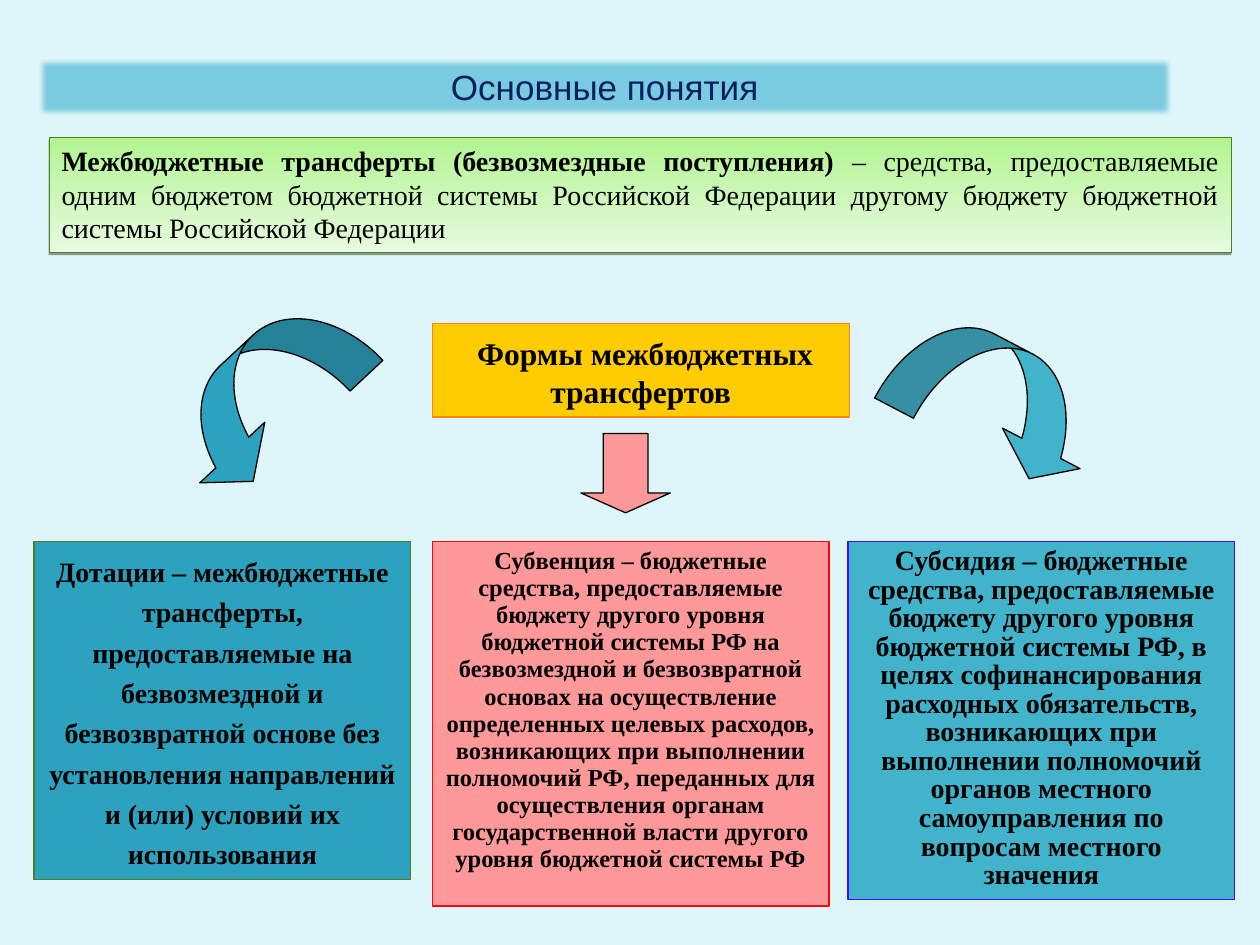
from dataclasses import dataclass

from lxml.etree import SubElement as Sub
from pptx import Presentation
from pptx.dml.color import RGBColor as RGB
from pptx.enum.shapes import MSO_SHAPE as Kind
from pptx.enum.text import MSO_ANCHOR as Anchor, MSO_AUTO_SIZE as Auto, PP_ALIGN as Align
from pptx.oxml.ns import qn
from pptx.util import Inches, Pt


@dataclass(frozen=True)
class Theme:
    back: str = "DEF5FA"
    band: str = "7ACBE0"
    navy: str = "002060"
    black: str = "000000"
    lime: str = "B2F591"
    pale: str = "E7FADF"
    green: str = "4A801E"
    gold: str = "FFCC00"
    orange: str = "FF8119"
    teal: str = "2DA2BF"
    pink: str = "FF9999"
    red: str = "FB050B"
    sky: str = "41B4CB"
    violet: str = "4709F7"
    sans: str = "Arial"
    serif: str = "Times New Roman"
    title: int = 20
    head: int = 18
    body: int = 16
    small: int = 14


T = Theme()


def add_box(kind, place, fill, line, width=0.75):
    shape = slide.shapes.add_shape(kind, *map(Inches, place))
    shape.shadow.inherit = False
    if fill:
        shape.fill.solid()
        shape.fill.fore_color.rgb = RGB.from_string(fill)
    shape.line.color.rgb = RGB.from_string(line)
    shape.line.width = Pt(width)
    return shape


def write(shape, runs, align=Align.CENTER, font=T.serif, color=T.black,
          space=1.0, anchor=Anchor.TOP):
    """Fill the shape with one paragraph of (text, size, bold) runs."""
    frame = shape.text_frame
    frame.word_wrap = True
    frame.auto_size = Auto.NONE
    frame.vertical_anchor = anchor
    para = frame.paragraphs[0]
    para.alignment = align
    para.line_spacing = space
    para.space_before = Pt(0)
    for text, size, bold in runs:
        run = para.add_run()
        run.text = text
        run.font.name = font
        run.font.size = Pt(size)
        run.font.bold = bold
        run.font.color.rgb = RGB.from_string(color)


deck = Presentation()
deck.slide_width, deck.slide_height = Inches(10), Inches(7.5)
slide = deck.slides.add_slide(deck.slide_layouts[5])
slide.background.fill.solid()
slide.background.fill.fore_color.rgb = RGB.from_string(T.back)

# Title band with soft edges
title = slide.shapes.title
title.left, title.top = Inches(0.31), Inches(0.47)
title.width, title.height = Inches(8.98), Inches(0.44)
title.fill.solid()
title.fill.fore_color.rgb = RGB.from_string(T.band)
title.shadow.inherit = False
Sub(title.element.spPr.find(qn("a:effectLst")), qn("a:softEdge"), rad=str(Pt(2.5)))
write(title, [("Основные понятия", T.title, False)], font=T.sans, color=T.navy,
      anchor=Anchor.MIDDLE)

# Definition
term = add_box(Kind.RECTANGLE, (0.39, 1.09, 9.38, 0.91), None, T.green, 0.5)
term.fill.gradient()
term.fill.gradient_angle = 270
for stop, color in zip(term.fill.gradient_stops, (T.lime, T.pale)):
    stop.color.rgb = RGB.from_string(color)
for stop, place in zip(term.fill.gradient_stops, (0, 1)):
    stop.position = place
shade = Sub(term.element.spPr.find(qn("a:effectLst")), qn("a:outerShdw"),
            blurRad="0", dist=str(Pt(1.6)), dir="5400000", rotWithShape="0")
Sub(Sub(shade, qn("a:srgbClr"), val=T.black), qn("a:alpha"), val="38000")
write(term, [
    ("Межбюджетные трансферты (безвозмездные поступления) ", T.body, True),
    ("– средства, предоставляемые одним бюджетом бюджетной системы Российской "
     "Федерации другому бюджету бюджетной системы Российской Федерации", T.body, False),
], align=Align.JUSTIFY)

# Heading of the three forms
forms = add_box(Kind.RECTANGLE, (3.43, 2.57, 3.31, 0.74), T.gold, T.orange)
write(forms, [(" ", T.title, True), ("Формы межбюджетных трансфертов", T.head, True)])

# Arrows to the forms
arrows = [
    (Kind.CURVED_RIGHT_ARROW, (1.68, 2.27, 0.85, 1.76), 47, T.teal, (0.42, 0.83, 0.33)),
    (Kind.CURVED_LEFT_ARROW, (7.47, 2.3, 0.89, 1.73), 297.6, T.sky, (0.39, 0.78, 0.29)),
    (Kind.DOWN_ARROW, (4.61, 3.44, 0.71, 0.63), 0, T.pink, (0.5, 0.25)),
]
for kind, place, turn, fill, bends in arrows:
    arrow = add_box(kind, place, fill, T.black)
    arrow.rotation = turn
    for i, bend in enumerate(bends):
        arrow.adjustments[i] = bend

# The three forms
cards = [
    (0.27, 2.99, 2.68, T.teal, T.green, T.body, 1.2,
     "Дотации – межбюджетные трансферты, предоставляемые на безвозмездной и "
     "безвозвратной основе без установления направлений и (или) условий их использования"),
    (3.43, 3.15, 2.89, T.pink, T.red, T.small, 0.92,
     "Субвенция – бюджетные средства, предоставляемые бюджету другого уровня бюджетной "
     "системы РФ на безвозмездной и безвозвратной основах на осуществление определенных "
     "целевых расходов, возникающих при выполнении полномочий РФ, переданных для "
     "осуществления органам государственной власти другого уровня бюджетной системы РФ"),
    (6.73, 3.07, 2.84, T.sky, T.violet, T.body, 0.85,
     "Субсидия – бюджетные средства, предоставляемые бюджету другого уровня бюджетной "
     "системы РФ, в целях софинансирования расходных обязательств, возникающих при "
     "выполнении полномочий органов местного самоуправления по вопросам местного значения"),
]
for left, width, height, fill, line, size, space, text in cards:
    card = add_box(Kind.RECTANGLE, (left, 4.3, width, height), fill, line)
    write(card, [(text, size, True)], space=space)

deck.save("out.pptx")
